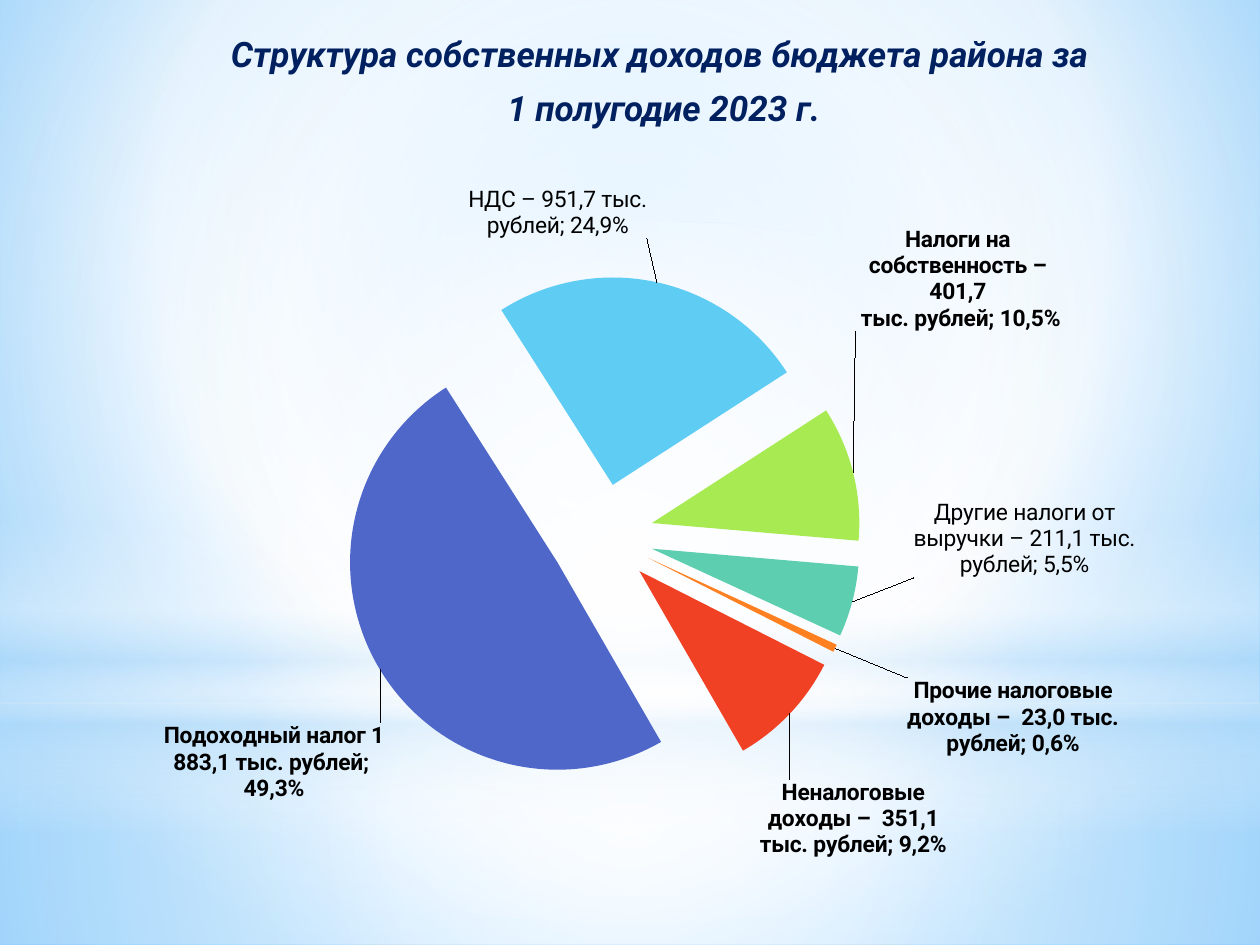
from dataclasses import dataclass

from lxml import etree
from pptx import Presentation
from pptx.chart.data import CategoryChartData
from pptx.dml.color import RGBColor
from pptx.enum.chart import XL_CHART_TYPE, XL_LABEL_POSITION
from pptx.enum.shapes import MSO_SHAPE
from pptx.enum.text import PP_ALIGN
from pptx.oxml import parse_xml
from pptx.oxml.ns import nsdecls, qn
from pptx.util import Inches, Pt

PIE = XL_CHART_TYPE.PIE
OUTSIDE = XL_LABEL_POSITION.OUTSIDE_END
RECT, OVAL = MSO_SHAPE.RECTANGLE, MSO_SHAPE.OVAL
CENTER = PP_ALIGN.CENTER

SLIDE_W, SLIDE_H = 10, 7.5
CHART_W, CHART_H = 8.83, 6.14


@dataclass(frozen=True)
class Theme:
    font: str = "Roboto"
    title_size: int = 20
    chart_size: int = 18
    label_size: int = 13
    title: str = "002060"
    text: str = "000000"
    white: str = "FFFFFF"
    haze: str = "B4DCFA"
    sky: str = "9ED5FF"
    edge: str = "5BB9FF"


THEME = Theme()
MIDDLE = (50, 50, 50, 50)

TITLE = ["Структура собственных доходов бюджета района за", " 1 полугодие 2023 г."]

# category, share, colour, label, bold label, label shift in inches
INCOMES = [
    ("Подоходный налог -1883,1 тыс. рублей", 0.493, "4E67C8",
     "Подоходный налог 1 883,1 тыс. рублей; \n49,3%", True, (0.08, 0.39)),
    ("НДС -951,7 тыс. рублей", 0.249, "5ECCF3",
     "НДС – 951,7 тыс. рублей; 24,9%", False, (-1.51, -0.29)),
    ("Налоги на собственность - 401,7 тыс. рублей", 0.105, "A7EA52",
     "Налоги на собственность – 401,7\n тыс. рублей; 10,5%", True, (-0.04, -1.11)),
    ("Другие налоги от выручки - 211,1 тыс. рублей", 0.055, "5DCEAF",
     "Другие налоги от выручки – 211,1 тыс. рублей; 5,5%", False, (0.43, -0.83)),
    ("Прочие налоговые доходы - 23,0тыс. рублей", 0.006, "FF8021",
     "Прочие налоговые доходы –  23,0 тыс. рублей; 0,6%", True, (0.52, 0.21)),
    ("Неналоговые доходы бюджета -  351,1 тыс. рублей", 0.092, "F14124",
     "Неналоговые доходы –  351,1 тыс. рублей; 9,2%", True, (-0.28, 0.48)),
]


def set_gradient(fill, owner, stops, focus=None):
    """Stops are (position %, colour, opacity %); without a focus it runs downwards."""
    fill.gradient()
    stop_xml = "".join(
        f'<a:gs pos="{pos * 1000}"><a:srgbClr val="{color}">'
        f'<a:alpha val="{alpha * 1000}"/></a:srgbClr></a:gs>'
        for pos, color, alpha in stops)
    if focus:
        sides = " ".join(f'{side}="{share * 1000}"' for side, share in zip("ltrb", focus))
        shade = f'<a:path path="circle"><a:fillToRect {sides}/></a:path>'
    else:
        shade = '<a:lin ang="5400000" scaled="0"/>'
    old = owner.find(".//" + qn("a:gradFill"))
    new = parse_xml(f'<a:gradFill {nsdecls("a")} rotWithShape="1">'
                    f"<a:gsLst>{stop_xml}</a:gsLst>{shade}</a:gradFill>")
    old.getparent().replace(old, new)


def add_glow(s, kind, top, height, stops, focus=None):
    sp = s.shapes.add_shape(kind, 0, Inches(top), Inches(SLIDE_W), Inches(height))
    sp.shadow.inherit = False
    sp.line.fill.background()
    set_gradient(sp.fill, sp._element.spPr, stops, focus)


def add_backdrop(s):
    white, haze = THEME.white, THEME.haze
    set_gradient(s.background.fill, s._element,
                 [(0, THEME.sky, 100), (60, white, 100), (100, THEME.edge, 100)],
                 (20, 10, 20, 60))
    horizon = 5.58
    add_glow(s, RECT, horizon, SLIDE_H - horizon,
             [(0, white, 91), (37, white, 76), (100, haze, 79)], MIDDLE)
    add_glow(s, RECT, 0, horizon,
             [(0, white, 89), (48, white, 62), (100, haze, 79)], MIDDLE)
    add_glow(s, RECT, 4.12, SLIDE_H / 3,
             [(0, white, 0), (29, white, 30), (45, haze, 40),
              (55, white, 26), (65, haze, 60), (100, white, 0)])
    add_glow(s, OVAL, 1.75, horizon, [(0, white, 100), (56, white, 0)], MIDDLE)


def write_text(tf, lines, *, size, color, bold=False, italic=False, before=0, after=0):
    for i, line in enumerate(lines):
        p = tf.add_paragraph() if i else tf.paragraphs[0]
        p.alignment = CENTER
        p.space_before, p.space_after = Pt(before), Pt(after)
        r = p.add_run()
        r.text = line
        font = r.font
        font.name, font.size = THEME.font, Pt(size)
        font.bold, font.italic = bold, italic
        font.color.rgb = RGBColor.from_string(color)


def add_title(s):
    tf = s.shapes.add_textbox(Inches(0.51), Inches(0.21), Inches(9.4), Inches(0.79)).text_frame
    tf.word_wrap = True
    tf.margin_left = Inches(0.15)
    write_text(tf, TITLE, size=THEME.title_size, color=THEME.title,
               bold=True, italic=True, before=4, after=3)


def manual_layout(**values):
    layout = etree.Element(qn("c:layout"))
    manual = etree.SubElement(layout, qn("c:manualLayout"))
    for tag, value in values.items():
        etree.SubElement(manual, qn(f"c:{tag}")).set("val", str(value))
    return layout


def add_slice_label(point, text, bold, shift):
    label = point.data_label
    write_text(label.text_frame, text.split("\n"),
               size=THEME.label_size, color=THEME.text, bold=bold)
    label.position = OUTSIDE
    dx, dy = shift
    label._get_or_add_dLbl().insert(1, manual_layout(x=dx / CHART_W, y=dy / CHART_H))


def shape_pie(chart, series):
    """Pull the slices apart, turn the pie and fix its place in the chart."""
    explosion = etree.Element(qn("c:explosion"))
    explosion.set("val", "25")
    series._element.find(qn("c:dPt")).addprevious(explosion)

    pie = series._element.getparent()
    for old in pie.findall(qn("c:firstSliceAng")):
        pie.remove(old)
    etree.SubElement(pie, qn("c:firstSliceAng")).set("val", "150")

    plot_area = pie.getparent()
    for old in plot_area.findall(qn("c:layout")):
        plot_area.remove(old)
    plot_area.insert(0, manual_layout(layoutTarget="inner", xMode="edge", yMode="edge",
                                      x=0.23, y=0.17, w=0.47, h=0.67))


def add_income_pie(s):
    data = CategoryChartData(number_format="0.0%")
    data.categories = [income[0] for income in INCOMES]
    data.add_series("Series 1", [income[1] for income in INCOMES])
    chart = s.shapes.add_chart(PIE, Inches(0.67), Inches(1.15),
                               Inches(CHART_W), Inches(CHART_H), data).chart
    chart.has_legend = chart.has_title = False
    chart.font.name, chart.font.size = THEME.font, Pt(THEME.chart_size)
    chart.font.color.rgb = RGBColor.from_string(THEME.text)

    plot = chart.plots[0]
    plot.vary_by_categories = True
    series = plot.series[0]
    labels = series.data_labels
    labels.show_value = labels.show_category_name = True
    labels.number_format, labels.number_format_is_linked = "0.0%", False
    labels.font.name, labels.font.size = THEME.font, Pt(THEME.label_size)
    for i, (_, _, color, text, bold, shift) in enumerate(INCOMES):
        point = series.points[i]
        point.format.fill.solid()
        point.format.fill.fore_color.rgb = RGBColor.from_string(color)
        point.format.line.fill.background()
        add_slice_label(point, text, bold, shift)
    shape_pie(chart, series)


def main():
    prs = Presentation()
    prs.slide_width, prs.slide_height = Inches(SLIDE_W), Inches(SLIDE_H)
    s = prs.slides.add_slide(prs.slide_layouts[6])
    add_backdrop(s)
    add_title(s)
    add_income_pie(s)
    prs.save("out.pptx")


if __name__ == "__main__":
    main()
